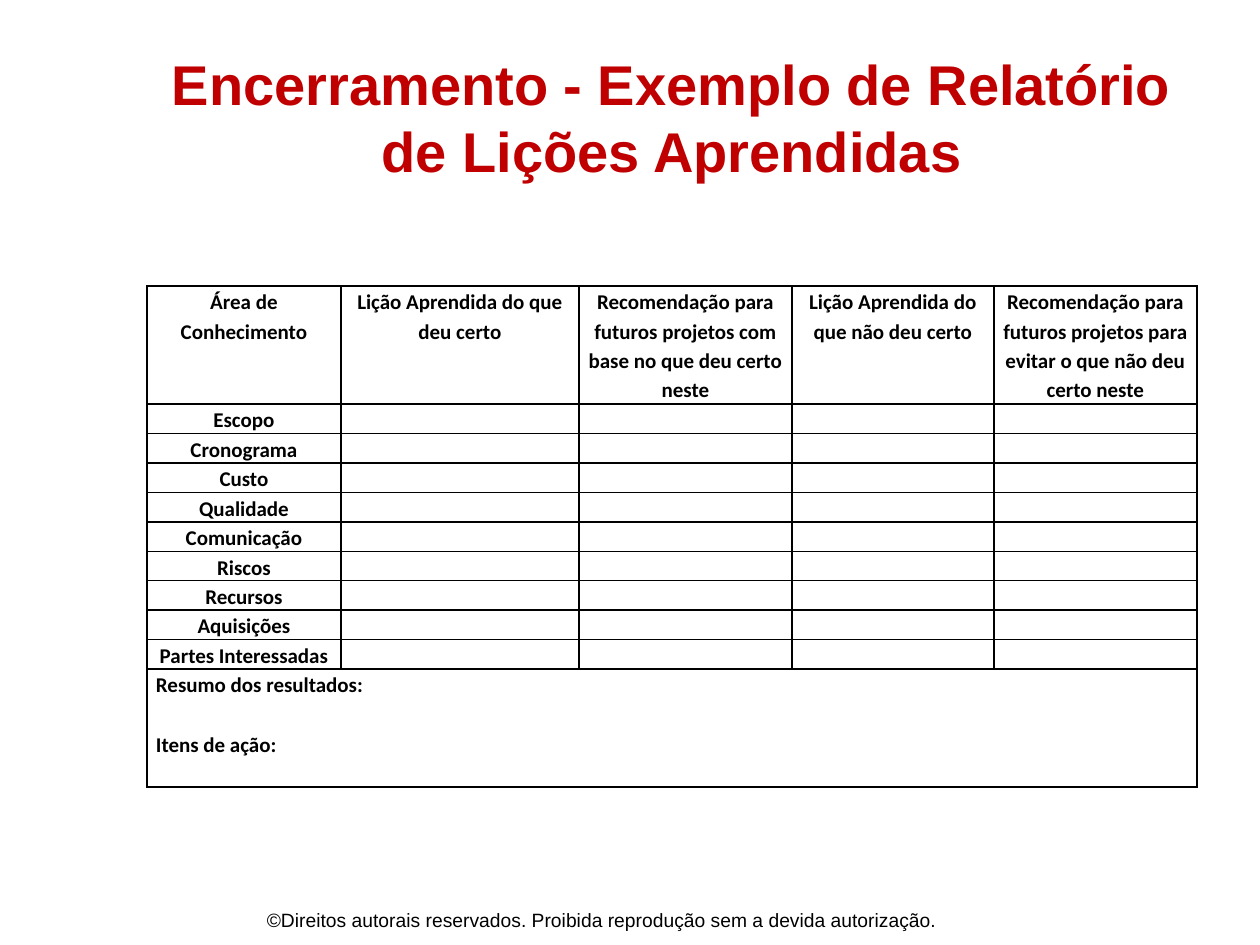
from typing import NamedTuple

from lxml.etree import SubElement as Sub
from pptx import Presentation
from pptx.dml.color import RGBColor as Rgb
from pptx.enum.text import MSO_ANCHOR as Anchor, MSO_AUTO_SIZE as Fit, PP_ALIGN as Align
from pptx.oxml.ns import qn
from pptx.util import Emu, Pt

SCALE = 914400 / 126  # EMU in one px
RED = Rgb(0xC0, 0x00, 0x00)
BLACK = Rgb(0x00, 0x00, 0x00)


class Box(NamedTuple):
    left: int
    top: int
    width: int
    height: int


class Style(NamedTuple):
    font: str
    size: int
    color: Rgb
    bold: bool


TITLE = Style("Arial", 32, RED, True)
CELL = Style("Calibri", 12, BLACK, True)
NOTE = Style("Arial", 11, BLACK, False)

WIDTHS = [194, 238, 213, 202, 203]
TALL, LOW = 118, 29
HEADS = [
    "Área de Conhecimento",
    "Lição Aprendida do que deu certo",
    "Recomendação para futuros projetos com base no que deu certo neste",
    "Lição Aprendida do que não deu certo",
    "Recomendação para futuros projetos para evitar o que não deu certo neste",
]
AREAS = [
    "Escopo", "Cronograma", "Custo", "Qualidade", "Comunicação",
    "Riscos", "Recursos", "Aquisições", "Partes Interessadas",
]
CLOSING = "Resumo dos resultados:\nItens de ação:"


def px(n: int) -> Emu:
    return Emu(round(n * SCALE))


def place(box: Box) -> list[Emu]:
    return [px(n) for n in box]


def format_text(frame, style: Style, align: Align) -> None:
    for para in frame.paragraphs:
        para.alignment = align
        for run in para.runs:
            font = run.font
            font.name = style.font
            font.size = Pt(style.size)
            font.bold = style.bold
            font.color.rgb = style.color


def add_edges(cell) -> None:
    props = cell._tc.get_or_add_tcPr()
    for side in ("lnL", "lnR", "lnT", "lnB"):
        line = Sub(props, qn(f"a:{side}"), w=str(Pt(1)))
        fill = Sub(line, qn("a:solidFill"))
        Sub(fill, qn("a:srgbClr"), val=str(BLACK))


def fill_cell(cell, text: str, align: Align) -> None:
    cell.margin_left = cell.margin_right = px(9)
    cell.margin_top = cell.margin_bottom = 0
    add_edges(cell)
    cell.fill.background()
    frame = cell.text_frame
    frame.text = text
    format_text(frame, CELL, align)
    for para in frame.paragraphs:
        para.line_spacing = 1.15
        if not para.runs:  # keeps empty rows low
            Sub(para._p, qn("a:endParaRPr"), sz=str(CELL.size * 100))


def add_grid(slide, left: int, top: int) -> None:
    rows = [HEADS] + [[area] + [""] * 4 for area in AREAS] + [[CLOSING] + [""] * 4]
    highs = [TALL] + [LOW] * len(AREAS) + [TALL]
    box = Box(left, top, sum(WIDTHS), sum(highs))
    grid = slide.shapes.add_table(len(rows), len(WIDTHS), *place(box)).table
    grid.first_row = grid.horz_banding = False
    for col, width in zip(grid.columns, WIDTHS):
        col.width = px(width)
    last = len(rows) - 1
    grid.cell(last, 0).merge(grid.cell(last, len(WIDTHS) - 1))
    for r, (texts, high) in enumerate(zip(rows, highs)):
        grid.rows[r].height = px(high)
        align = Align.LEFT if r == last else Align.CENTER
        for c, text in enumerate(texts):
            fill_cell(grid.cell(r, c), text, align)
    grid.cell(last, 0).text_frame.paragraphs[1].space_before = Pt(17)


def main() -> None:
    deck = Presentation()
    deck.slide_width, deck.slide_height = px(1260), px(945)
    slide = deck.slides.add_slide(deck.slide_layouts[5])

    # Title
    title = slide.shapes.title
    title.left, title.top, title.width, title.height = place(Box(147, 38, 1050, 158))
    frame = title.text_frame
    frame.text = "Encerramento - Exemplo de Relatório de Lições Aprendidas"
    frame.auto_size = Fit.NONE
    frame.vertical_anchor = Anchor.MIDDLE
    format_text(frame, TITLE, Align.CENTER)

    # Lessons table
    add_grid(slide, 147, 286)

    # Copyright line
    note = slide.shapes.add_textbox(*place(Box(123, 902, 958, 43))).text_frame
    note.word_wrap = True
    note.text = "©Direitos autorais reservados. Proibida reprodução sem a devida autorização."
    format_text(note, NOTE, Align.CENTER)

    deck.save("out.pptx")


if __name__ == "__main__":
    main()
